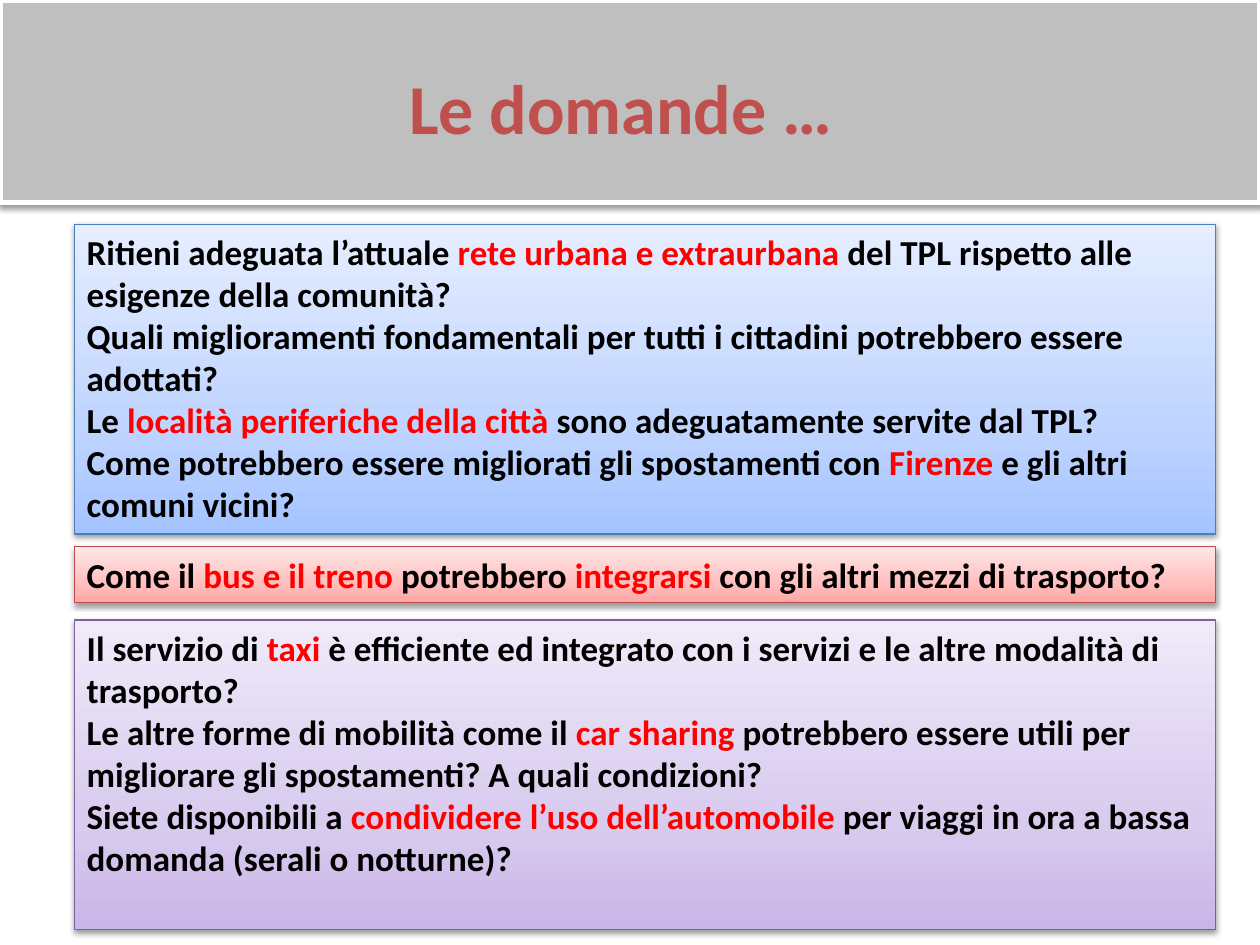
import copy
import lxml.etree
import pptx
import pptx.dml.color
import pptx.enum.shapes
import pptx.enum.text
import pptx.oxml.ns
import pptx.util

prs = pptx.Presentation()
prs.slide_width = pptx.util.Inches(10)
prs.slide_height = pptx.util.Inches(7.5)
s = prs.slides.add_slide(prs.slide_layouts[6])

# Grid of 100 columns by 75 rows
COL = prs.slide_width / 100
ROW = prs.slide_height / 75
RECT = pptx.enum.shapes.MSO_SHAPE.RECTANGLE
qn = pptx.oxml.ns.qn


def rgb(value):
    return pptx.dml.color.RGBColor.from_string(value)


def add_panel(x, y, w, h, line, line_width):
    """Rectangle with an outline and a soft shadow below it."""
    sp = s.shapes.add_shape(RECT, int(x * COL), int(y * ROW), int(w * COL), int(h * ROW))
    sp.line.color.rgb = rgb(line)
    sp.line.width = pptx.util.Pt(line_width)
    sp.shadow.inherit = False
    shadow = lxml.etree.SubElement(
        sp._element.spPr.find(qn("a:effectLst")), qn("a:outerShdw"),
        blurRad=str(pptx.util.Pt(3.1)), dist=str(pptx.util.Pt(1.6)),
        dir="5400000", rotWithShape="0")
    color = lxml.etree.SubElement(shadow, qn("a:srgbClr"), val="000000")
    lxml.etree.SubElement(color, qn("a:alpha"), val="38000")
    return sp


# Title band
band = add_panel(0, 0, 100, 16.1, "FFFFFF", 3)
band.fill.solid()
band.fill.fore_color.rgb = rgb("BFBFBF")

# Title
title = s.shapes.add_textbox(int(1.6 * COL), int(4.6 * ROW), int(95.3 * COL), int(7.7 * ROW))
tf = title.text_frame
tf.word_wrap = True
p = tf.paragraphs[0]
p.alignment = pptx.enum.text.PP_ALIGN.CENTER
r = p.add_run()
r.text = "Le domande …"
r.font.name = "Calibri"
r.font.size = pptx.util.Pt(40)
r.font.bold = True
r.font.color.rgb = rgb("C0504D")

# Question panels: top, height, line, gradient from bottom to top, paragraphs.
# In each paragraph the runs alternate between plain and highlighted.
panels = [
    (17.8, 24.6, "4B7EBC", ("A4C4FF", "BFD4FF", "E6EEFF"), [
        ["Ritieni adeguata l’attuale ", "rete urbana e extraurbana ",
         "del TPL rispetto alle esigenze della comunità?"],
        ["Quali miglioramenti fondamentali per tutti i cittadini potrebbero essere adottati?"],
        ["Le ", "località periferiche della città ", "sono adeguatamente servite dal TPL?"],
        ["Come potrebbero essere migliorati gli spostamenti con ", "Firenze ",
         "e gli altri comuni vicini?"],
    ]),
    (43.4, 4.4, "BF4C48", ("FFA6A5", "FFC0BF", "FFE7E7"), [
        ["Come il ", "bus e il treno ", "potrebbero ", "integrarsi",
         " con gli altri mezzi di trasporto?"],
    ]),
    (49.2, 24.6, "7D60A0", ("C9B5E8", "D8CBEE", "F0EAF9"), [
        ["Il servizio di ", "taxi",
         " è efficiente ed integrato con i servizi e le altre modalità di trasporto?"],
        ["Le altre forme di mobilità come il ", "car sharing ",
         "potrebbero essere utili per migliorare gli spostamenti? A quali condizioni?"],
        ["Siete disponibili a ", "condividere l’uso dell’automobile ",
         "per viaggi in ora a bassa domanda (serali o notturne)?"],
    ]),
]

for top, height, line, colors, paragraphs in panels:
    sp = add_panel(5.9, top, 90.6, height, line, 0.75)

    # Three-stop vertical gradient
    sp.fill.gradient()
    sp.fill.gradient_angle = 90
    stops = sp._element.spPr.find(".//" + qn("a:gsLst"))
    stops.insert(1, copy.deepcopy(stops[0]))
    for stop, position, color in zip(sp.fill.gradient_stops, (0, 0.35, 1), colors):
        stop.position = position
        stop.color.rgb = rgb(color)

    # Questions
    tf = sp.text_frame
    tf.word_wrap = True
    tf.vertical_anchor = pptx.enum.text.MSO_ANCHOR.TOP
    for i, runs in enumerate(paragraphs):
        p = tf.add_paragraph() if i else tf.paragraphs[0]
        p.alignment = pptx.enum.text.PP_ALIGN.LEFT
        for j, text in enumerate(runs):
            r = p.add_run()
            r.text = text
            r.font.name = "Calibri"
            r.font.size = pptx.util.Pt(20)
            r.font.bold = True
            r.font.color.rgb = rgb("FF0000" if j % 2 else "000000")

prs.save("out.pptx")
